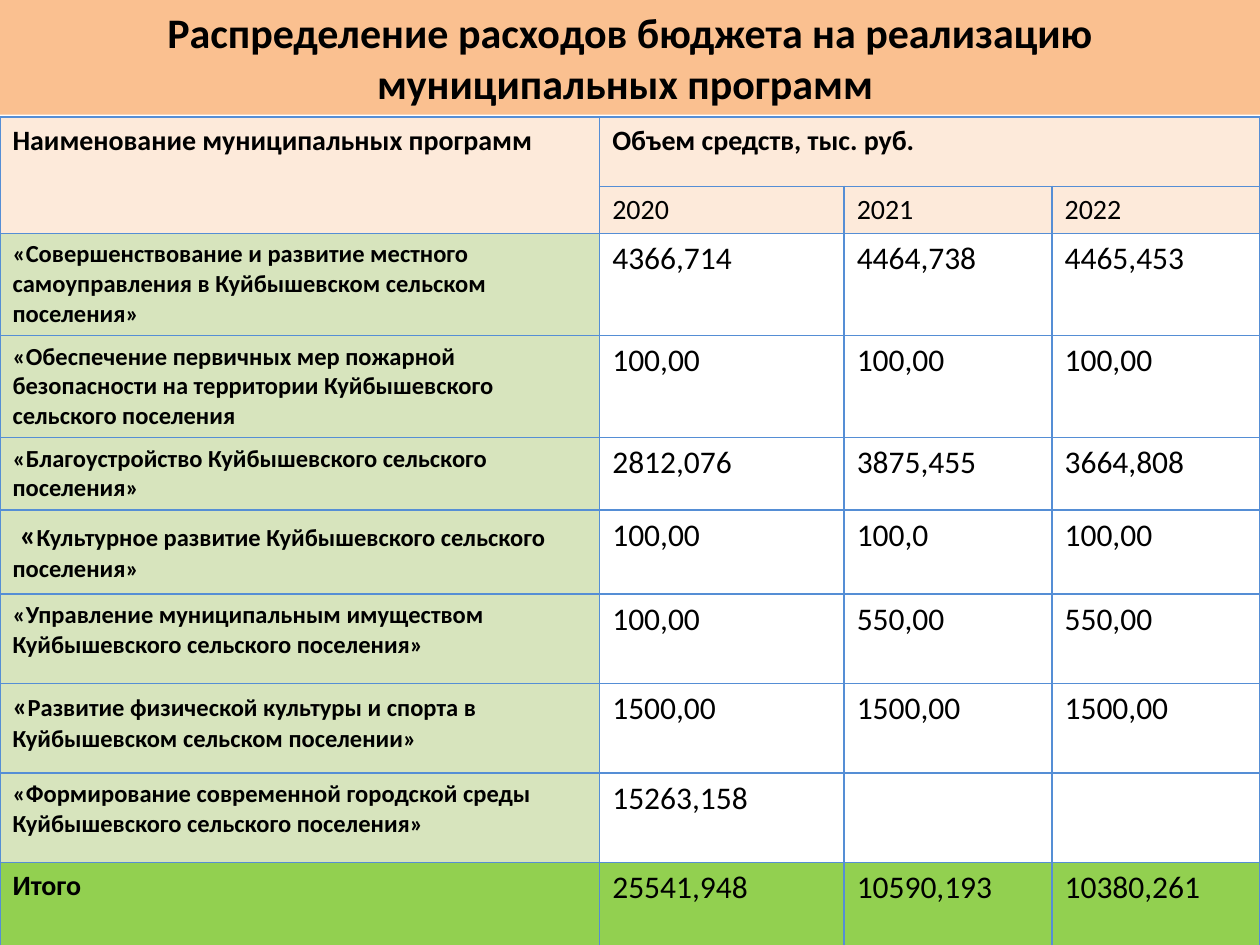
from dataclasses import dataclass

from lxml import etree
from pptx import Presentation
from pptx.dml.color import RGBColor
from pptx.enum.shapes import MSO_SHAPE
from pptx.enum.text import MSO_ANCHOR, PP_ALIGN
from pptx.oxml.ns import qn
from pptx.util import Inches, Pt

RECTANGLE = MSO_SHAPE.RECTANGLE
CENTER = PP_ALIGN.CENTER
MIDDLE = MSO_ANCHOR.MIDDLE


@dataclass(frozen=True)
class Theme:
    font: str = "Calibri"
    text: str = "000000"
    title_fill: str = "FAC090"
    header_fill: str = "FDEADA"
    program_fill: str = "D7E4BD"
    total_fill: str = "92D050"
    border: str = "558ED5"
    border_width: int = 1
    title_size: int = 24
    header_size: int = 16
    program_size: int = 14
    value_size: int = 18


THEME = Theme()

TITLE = "Распределение расходов бюджета на реализацию муниципальных программ "
PROGRAM_HEADER = "Наименование муниципальных программ"
AMOUNT_HEADER = "Объем средств, тыс. руб."
YEARS = ["2020", "2021", "2022"]

# Program name, size of its opening quote, amounts by year
PROGRAMS = [
    ("«Совершенствование и развитие местного самоуправления в Куйбышевском сельском поселения»",
     THEME.program_size, ["4366,714", "4464,738", "4465,453"]),
    ("«Обеспечение первичных мер пожарной безопасности на территории Куйбышевского сельского поселения",
     THEME.program_size, ["100,00", "100,00", "100,00"]),
    ("«Благоустройство Куйбышевского сельского поселения»",
     THEME.program_size, ["2812,076", "3875,455", "3664,808"]),
    (" «Культурное развитие Куйбышевского сельского поселения»",
     THEME.value_size, ["100,00", "100,0", "100,00"]),
    ("«Управление муниципальным имуществом Куйбышевского сельского поселения»",
     THEME.program_size, ["100,00", "550,00", "550,00"]),
    ("«Развитие физической культуры и спорта в Куйбышевском сельском поселении»",
     THEME.header_size, ["1500,00", "1500,00", "1500,00"]),
    ("«Формирование современной городской среды Куйбышевского сельского поселения»",
     THEME.program_size, ["15263,158", "", ""]),
]
TOTAL_LABEL = "Итого"
TOTALS = ["25541,948", "10590,193", "10380,261"]

COLUMN_WIDTHS = [4.76, 1.94, 1.65, 1.65]
ROW_HEIGHTS = [0.55, 0.37, 0.8, 0.8, 0.57, 0.67, 0.71, 0.71, 0.71, 0.71]


def format_run(run, size, bold):
    run.font.name = THEME.font
    run.font.size = Pt(size)
    run.font.bold = bold
    run.font.color.rgb = RGBColor.from_string(THEME.text)


def add_title(slide):
    shape = slide.shapes.add_shape(RECTANGLE, 0, 0, Inches(10), Inches(0.91))
    shape.shadow.inherit = False
    shape.fill.solid()
    shape.fill.fore_color.rgb = RGBColor.from_string(THEME.title_fill)
    shape.line.fill.background()
    text_frame = shape.text_frame
    text_frame.word_wrap = True
    text_frame.margin_left = text_frame.margin_right = Inches(0.3)
    text_frame.vertical_anchor = MIDDLE
    text_frame.text = TITLE
    paragraph = text_frame.paragraphs[0]
    paragraph.alignment = CENTER
    format_run(paragraph.runs[0], THEME.title_size, True)


def set_borders(cell):
    properties = cell._tc.get_or_add_tcPr()
    for side in ("lnL", "lnR", "lnT", "lnB"):
        line = etree.SubElement(properties, qn(f"a:{side}"), w=str(Pt(THEME.border_width)))
        fill = etree.SubElement(line, qn("a:solidFill"))
        etree.SubElement(fill, qn("a:srgbClr"), val=THEME.border)


def fill_cell(cell, text, size, bold=False, fill=None):
    if fill:
        cell.fill.solid()
        cell.fill.fore_color.rgb = RGBColor.from_string(fill)
    else:
        cell.fill.background()
    paragraph = cell.text_frame.paragraphs[0]
    paragraph.text = text
    for run in paragraph.runs:
        format_run(run, size, bold)


def fill_program_cell(cell, name, quote_size):
    fill_cell(cell, name, THEME.program_size, True, THEME.program_fill)
    if quote_size != THEME.program_size:
        # Split off the larger opening quote
        paragraph = cell.text_frame.paragraphs[0]
        split = name.index("«") + 1
        paragraph.runs[0].text = name[:split]
        paragraph.runs[0].font.size = Pt(quote_size)
        rest = paragraph.add_run()
        rest.text = name[split:]
        format_run(rest, THEME.program_size, True)


def fill_values(table, row, values, size, fill=None):
    for column, value in enumerate(values, start=1):
        fill_cell(table.cell(row, column), value, size, fill=fill)


def add_budget_table(slide):
    frame = slide.shapes.add_table(
        len(ROW_HEIGHTS), len(COLUMN_WIDTHS), 0, Inches(0.93),
        Inches(sum(COLUMN_WIDTHS)), Inches(sum(ROW_HEIGHTS)))
    table = frame.table
    table.first_row = table.horz_banding = False
    for column, width in zip(table.columns, COLUMN_WIDTHS):
        column.width = Inches(width)
    for row, height in zip(table.rows, ROW_HEIGHTS):
        row.height = Inches(height)
    for cell in table.iter_cells():
        set_borders(cell)

    # Header
    table.cell(0, 0).merge(table.cell(1, 0))
    table.cell(0, 1).merge(table.cell(0, 3))
    for column, text in enumerate((PROGRAM_HEADER, AMOUNT_HEADER)):
        fill_cell(table.cell(0, column), text, THEME.header_size, True, THEME.header_fill)
    fill_values(table, 1, YEARS, THEME.header_size, THEME.header_fill)

    # Programs
    for row, (name, quote_size, amounts) in enumerate(PROGRAMS, start=2):
        fill_program_cell(table.cell(row, 0), name, quote_size)
        fill_values(table, row, amounts, THEME.value_size)

    # Total
    total_row = len(ROW_HEIGHTS) - 1
    fill_cell(table.cell(total_row, 0), TOTAL_LABEL, THEME.header_size, True, THEME.total_fill)
    fill_values(table, total_row, TOTALS, THEME.value_size, THEME.total_fill)


def main():
    presentation = Presentation()
    presentation.slide_width = Inches(10)
    presentation.slide_height = Inches(7.5)
    slide = presentation.slides.add_slide(presentation.slide_layouts[6])
    add_title(slide)
    add_budget_table(slide)
    presentation.save("out.pptx")


if __name__ == "__main__":
    main()
